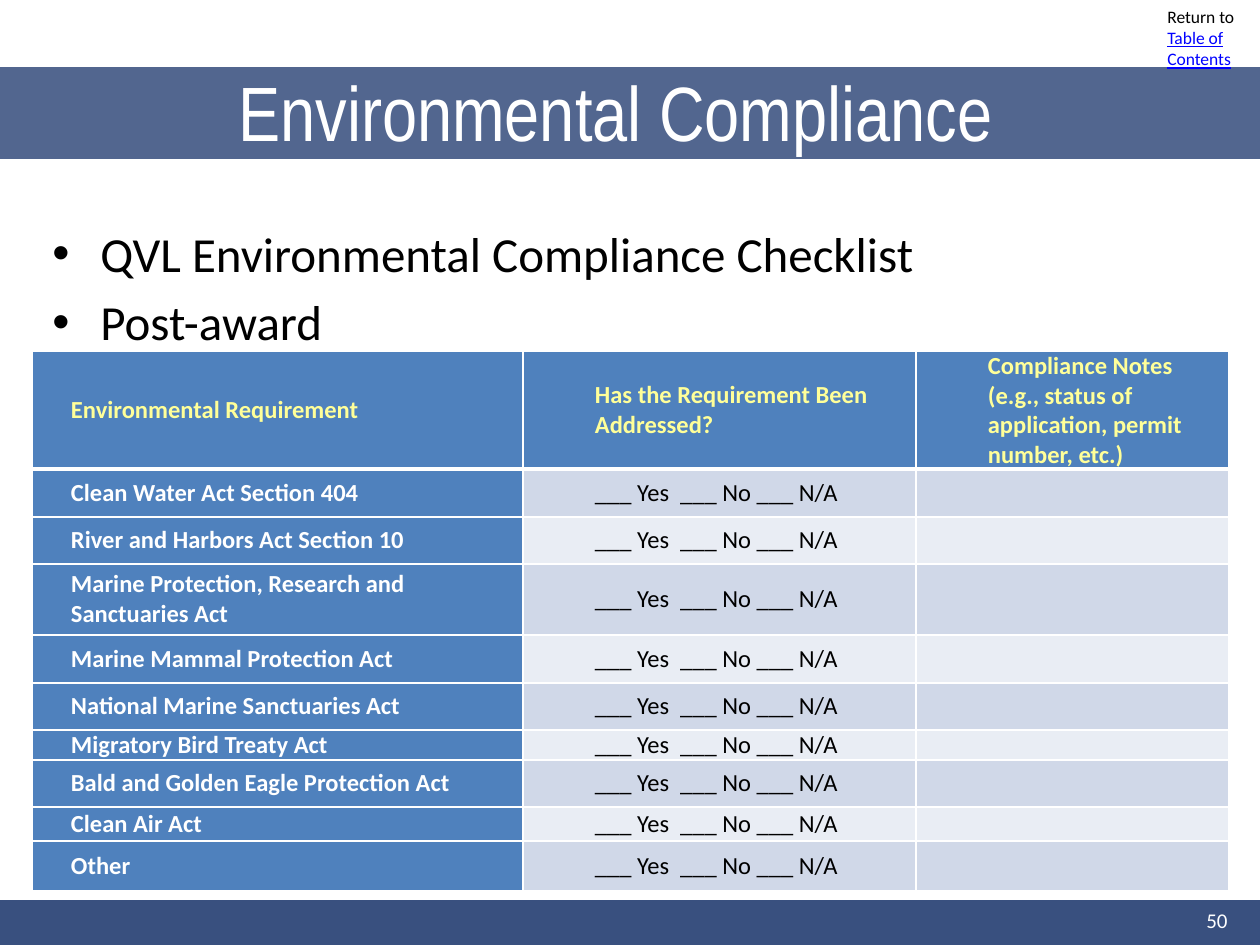
from lxml.etree import SubElement
from pptx import Presentation
from pptx.dml.color import RGBColor
from pptx.enum.shapes import MSO_SHAPE as Shape
from pptx.enum.text import MSO_ANCHOR as Anchor, PP_ALIGN as Align
from pptx.oxml.ns import qn
from pptx.util import Pt

EMU_PER_PX = 914400 / 126
COLORS = {name: RGBColor.from_string(value) for name, value in {
    "navy": "39507F", "white": "FFFFFF", "black": "000000", "link": "0000FF",
    "blue": "4F81BD", "yellow": "FFFF99", "dark band": "D0D8E8", "light band": "E9EDF4",
}.items()}


def px(*lengths):
    return [round(length * EMU_PER_PX) for length in lengths]


def style(para, size, color, name="Calibri", bold=False):
    para.font.size = Pt(size)
    para.font.name = name
    para.font.bold = bold
    para.font.color.rgb = COLORS[color]


deck = Presentation()
deck.slide_width, deck.slide_height = px(1260, 945)
page = deck.slides.add_slide(deck.slide_layouts[6])

for top, height, opacity in [(900, 47, 100), (67, 92, 87)]:
    bar = page.shapes.add_shape(Shape.RECTANGLE, *px(0, top, 1260, height))
    bar.shadow.inherit = False
    bar.fill.solid()
    bar.fill.fore_color.rgb = COLORS["navy"]
    bar.line.fill.background()
    if opacity < 100:
        color = bar._element.spPr.find(".//" + qn("a:srgbClr"))
        SubElement(color, qn("a:alpha"), val=str(opacity * 1000))

text_boxes = [
    ((1155, 0, 105, 77), Anchor.TOP, Align.LEFT, ["Return to "], 10, "black", "Calibri"),
    ((226, 32, 847, 158), Anchor.MIDDLE, Align.LEFT, ["Environmental Compliance"],
     44, "white", "Arial Narrow"),
    ((40, 217, 1134, 624), Anchor.TOP, Align.LEFT,
     ["QVL Environmental Compliance Checklist", "Post-award"], 28, "black", "Calibri"),
    ((946, 895, 294, 50), Anchor.MIDDLE, Align.RIGHT, ["50"], 12, "white", "Calibri"),
]
for place, anchor, align, lines, size, color, name in text_boxes:
    box = page.shapes.add_textbox(*px(*place))
    frame = box.text_frame
    frame.word_wrap = True
    frame.vertical_anchor = anchor
    for index, line in enumerate(lines):
        para = frame.paragraphs[0] if index == 0 else frame.add_paragraph()
        para.text = line
        para.alignment = align
        if len(lines) > 1:
            indent = px(48)[0]
            props = para._p.get_or_add_pPr()
            props.set("marL", str(indent))
            props.set("indent", str(-indent))
            SubElement(props, qn("a:buFont"), typeface="Arial")
            SubElement(props, qn("a:buChar"), char="•")
        if index:
            para.space_before = Pt(5.6)
        style(para, size, color, name)
    if line == "Return to ":
        span = para.add_run()
        span.text = "Table of Contents"
        span.font.underline = True
        span.font.color.rgb = COLORS["link"]

headers = [
    "Environmental Requirement",
    "Has the Requirement Been Addressed?",
    "Compliance Notes (e.g., status of application, permit number, etc.)",
]
requirements = [
    ("Clean Water Act Section 404", 48),
    ("River and Harbors Act Section 10", 47),
    ("Marine Protection, Research and Sanctuaries Act", 71),
    ("Marine Mammal Protection Act", 48),
    ("National Marine Sanctuaries Act", 47),
    ("Migratory Bird Treaty Act", 30),
    ("Bald and Golden Eagle Protection Act", 47),
    ("Clean Air Act", 34),
    ("Other", 50),
]
rows = [(headers, 118)]
rows += [([name, "___ Yes  ___ No ___ N/A", ""], height) for name, height in requirements]

table = page.shapes.add_table(len(rows), 3, *px(32, 351, 1197, 540)).table
table.first_row = table.horz_banding = False
for column, width in zip(table.columns, px(491, 393, 313)):
    column.width = width

for row_index, (texts, height) in enumerate(rows):
    table.rows[row_index].height = px(height)[0]
    for col_index, text in enumerate(texts):
        cell = table.cell(row_index, col_index)
        cell.vertical_anchor = Anchor.MIDDLE
        cell.margin_left, cell.margin_top, cell.margin_right, cell.margin_bottom = px(9, 0, 9, 0)
        para = cell.text_frame.paragraphs[0]
        if text:
            para.text = text
            indent = px(30 if col_index == 0 else 63)[0]
            para._p.get_or_add_pPr().set("marL", str(indent))
        else:
            SubElement(para._p, qn("a:endParaRPr"), sz="1400")

        header, first = row_index == 0, col_index == 0
        color = "yellow" if header else "white" if first else "black"
        style(para, 14, color, bold=header or first)

        for side in "LRTB":
            thick = (header and side == "B") or (row_index == 1 and side == "T")
            width = Pt(3 if thick else 1)
            border = SubElement(cell._tc.get_or_add_tcPr(), qn("a:ln" + side), w=str(width))
            paint = SubElement(border, qn("a:solidFill"))
            SubElement(paint, qn("a:srgbClr"), val=str(COLORS["white"]))

        band = "dark band" if row_index % 2 else "light band"
        cell.fill.solid()
        cell.fill.fore_color.rgb = COLORS["blue" if header or first else band]

deck.save("out.pptx")
